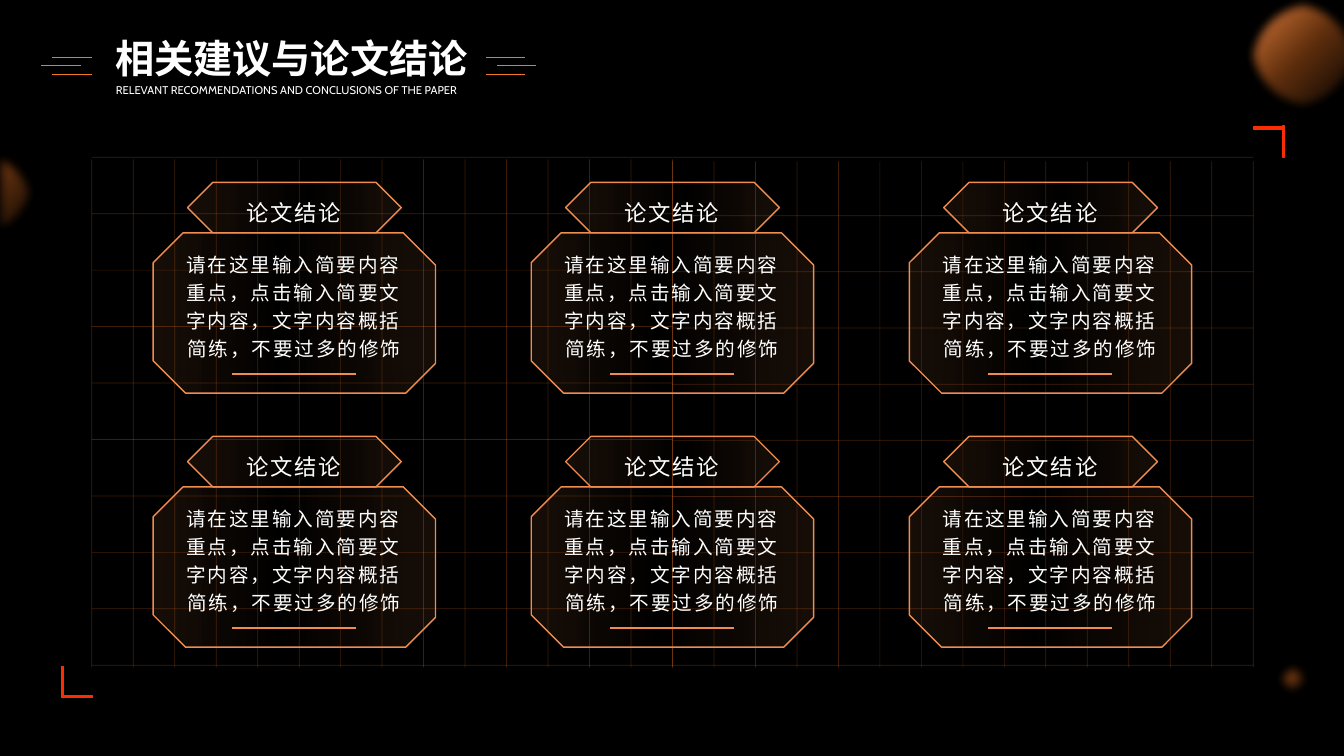
from math import cos, pi, sin

from lxml.etree import SubElement
from pptx import Presentation
from pptx.dml.color import RGBColor
from pptx.enum.shapes import MSO_CONNECTOR, MSO_SHAPE
from pptx.enum.text import MSO_ANCHOR, PP_ALIGN
from pptx.oxml.ns import qn
from pptx.util import Inches, Pt

TITLE = "相关建议与论文结论"
SUBTITLE = "RELEVANT RECOMMENDATIONS AND CONCLUSIONS OF THE PAPER"
CARD = ("论文结论", "请在这里输入简要内容重点，点击输入简要文字内容，文字内容概括简练，不要过多的修饰")
CARDS = [[CARD] * 3] * 2

WHITE, ORANGE, PEACH, RED = "FFFFFF", "F07724", "EF8D51", "FA2D04"
CARD_FADE = [(0, PEACH, 10), (56, PEACH, 0), (100, PEACH, 10)]

# Background grid: two halves of 14 columns and 9 rows
GRID_COLUMNS, GRID_ROWS = 14, 9
GRID_TOP, GRID_BOTTOM = 1.56, 6.6
GRID_HALVES = [(0.91, 1.58, 2.12), (6.67, 1.6, 2.14)]  # left, column top, first row
HALF_WIDTH = 5.76
COLUMN_STEP = HALF_WIDTH / GRID_COLUMNS

# Cards: left and top of the first one, and the steps between them
CARD_LEFT, CARD_TOP, CARD_STEP_X, CARD_STEP_Y = 1.52, 1.81, 3.75, 2.52
CARD_WIDTH, TAB_WIDTH, TAB_HEIGHT, BODY_HEIGHT = 2.8, 2.12, 0.5, 1.59

# Glowing balls: left, top, diameter, edge softness in points, gradient
BALLS = [
    (12.61, 6.52, 0.44, 7, [(0, ORANGE, 90), (49, ORANGE, 40), (95, ORANGE, 0)]),
    (12.33, -0.04, 1.18, 7, [(0, PEACH, 100), (49, ORANGE, 40), (95, ORANGE, 0)]),
]
# Corner brackets: left, top, width, height of each bar
BRACKET_BARS = [
    (0.61, 6.61, 0.02, 0.31), (0.61, 6.9, 0.31, 0.02),
    (12.72, 1.25, 0.02, 0.31), (12.43, 1.26, 0.31, 0.02),
]
# Title dashes: left ends of the outer rows and of the middle row
DASH_WIDTH, DASH_ROWS = 0.39, (0.57, 0.65, 0.74)
DASH_SIDES = [(0.52, 0.41), (4.82, 4.93)]

deck = Presentation()
deck.slide_width, deck.slide_height = Inches(13.33), Inches(7.5)
page = deck.slides.add_slide(deck.slide_layouts[6])


def color(hex_string):
    return RGBColor.from_string(hex_string)


def add_alpha(color_element, percent):
    SubElement(color_element, qn("a:alpha")).set("val", str(percent * 1000))


def add_line(x1, y1, x2, y2, hex_string, width=1, opacity=100):
    line = page.shapes.add_connector(
        MSO_CONNECTOR.STRAIGHT, Inches(x1), Inches(y1), Inches(x2), Inches(y2))
    line.line.color.rgb = color(hex_string)
    line.line.width = Pt(width)
    properties = line._element.spPr
    if opacity < 100:
        add_alpha(properties.find(".//" + qn("a:srgbClr")), opacity)
    SubElement(properties, qn("a:effectLst"))


def set_outline(shape, hex_string=None):
    shape.shadow.inherit = False
    if hex_string:
        shape.line.color.rgb = color(hex_string)
        shape.line.width = Pt(1)
    else:
        shape.line.fill.background()


def set_gradient(shape, stops, angle=0):
    """Fill with (position, colour, opacity) stops, all but the colour in percent."""
    shape.fill.gradient()
    gradient = shape._element.spPr.find(qn("a:gradFill"))
    stop_list = gradient.find(qn("a:gsLst"))
    for stop in list(stop_list):
        stop_list.remove(stop)
    for position, hex_string, opacity in stops:
        stop = SubElement(stop_list, qn("a:gs"), pos=str(position * 1000))
        add_alpha(SubElement(stop, qn("a:srgbClr"), val=hex_string), opacity)
    gradient.find(qn("a:lin")).set("ang", str(angle * 60000))


def soften(shape, points):
    effects = shape._element.spPr.find(qn("a:effectLst"))
    SubElement(effects, qn("a:softEdge"), rad=str(Pt(points)))


def add_shape(kind, left, top, width, height, outline=None):
    shape = page.shapes.add_shape(
        kind, Inches(left), Inches(top), Inches(width), Inches(height))
    set_outline(shape, outline)
    return shape


def add_snipped(left, top, width, height, snips):
    shape = add_shape(MSO_SHAPE.SNIP_2_DIAG_RECTANGLE, left, top, width, height, PEACH)
    for index, snip in enumerate(snips):
        shape.adjustments[index] = snip
    set_gradient(shape, CARD_FADE)
    return shape


def add_text(text, left, top, width, height, font, size, align=PP_ALIGN.CENTER,
             bold=False, wrap=True, spacing=None, tracking=0, inset=True):
    box = page.shapes.add_textbox(Inches(left), Inches(top), Inches(width), Inches(height))
    frame = box.text_frame
    frame.text = text
    frame.word_wrap = wrap
    if not inset:
        frame.margin_left = frame.margin_right = frame.margin_top = frame.margin_bottom = 0
        frame.vertical_anchor = MSO_ANCHOR.MIDDLE
    para = frame.paragraphs[0]
    para.alignment, para.line_spacing = align, spacing
    span = para.runs[0]
    span.font.name, span.font.size, span.font.bold = font, Pt(size), bold
    span.font.color.rgb = color(WHITE)
    properties = span._r.get_or_add_rPr()
    SubElement(properties, qn("a:ea"), typeface=font)
    if tracking:
        properties.set("spc", str(round(tracking * 100)))


def add_grid():
    for left, column_top, first_row in GRID_HALVES:
        for column in range(GRID_COLUMNS + 1):
            x = left + column * COLUMN_STEP
            add_line(x, column_top, x, 6.62, ORANGE, 0.5, 25)
        row_step = (6.04 - first_row) / (GRID_ROWS - 2)
        inner_rows = [first_row + row * row_step for row in range(GRID_ROWS - 1)]
        for y in [GRID_TOP, *inner_rows, GRID_BOTTOM]:
            add_line(left, y, left + HALF_WIDTH, y, ORANGE, 0.5, 25)


def add_card(heading, summary, left, top):
    body_top = top + TAB_HEIGHT
    body = add_snipped(left, body_top, CARD_WIDTH, BODY_HEIGHT, (0.201, 0.186))
    body._element.spPr.find(qn("a:xfrm")).set("flipH", "1")
    add_line(left + 0.78, top + 1.9, left + 2.01, top + 1.9, PEACH)
    add_snipped(left + (CARD_WIDTH - TAB_WIDTH) / 2, top, TAB_WIDTH, TAB_HEIGHT, (0.5, 0.5))
    add_text(summary, left + 0.16, body_top + 0.1, 2.47, 1.21, "Roboto", 14,
             spacing=1.2, tracking=1.3)
    add_text(heading, left + 0.41, top + 0.06, 1.97, 0.35, "Lato", 16,
             spacing=1.2, tracking=1.3)


def add_half_ball(center_x, center_y, radius):
    """Draw the right half of a ball that enters from the left edge."""
    angles = [-pi / 2 + pi * step / 40 for step in range(41)]
    points = [(Inches(center_x + radius * cos(angle)), Inches(center_y + radius * sin(angle)))
              for angle in angles]
    builder = page.shapes.build_freeform(*points[0])
    builder.add_line_segments(points[1:], close=True)
    ball = builder.convert_to_shape()
    set_outline(ball)
    set_gradient(ball, [(0, ORANGE, 55), (100, ORANGE, 0)], 45)
    soften(ball, 7)


page.background.fill.solid()
page.background.fill.fore_color.rgb = color("000000")
add_grid()

for bar_place in BRACKET_BARS:
    bar = add_shape(MSO_SHAPE.RECTANGLE, *bar_place, RED)
    bar.fill.solid()
    bar.fill.fore_color.rgb = color(RED)

for left, top, diameter, softness, stops in BALLS:
    ball = add_shape(MSO_SHAPE.OVAL, left, top, diameter, diameter)
    set_gradient(ball, stops, 45)
    soften(ball, softness)

for row, cards in enumerate(CARDS):
    for column, (heading, summary) in enumerate(cards):
        add_card(heading, summary, CARD_LEFT + column * CARD_STEP_X, CARD_TOP + row * CARD_STEP_Y)

add_text(TITLE, 0.99, 0.32, 3.8, 0.51, "Roboto", 28, bold=True, wrap=False, inset=False)
add_text(SUBTITLE, 1.15, 0.83, 3.5, 0.13, "Cabin", 8, PP_ALIGN.JUSTIFY, inset=False)
for outer, middle in DASH_SIDES:
    for x, y in zip((outer, middle, outer), DASH_ROWS):
        add_line(x, y, x + DASH_WIDTH, y, ORANGE)
add_half_ball(-0.08, 1.92, 0.47)

deck.save("out.pptx")
